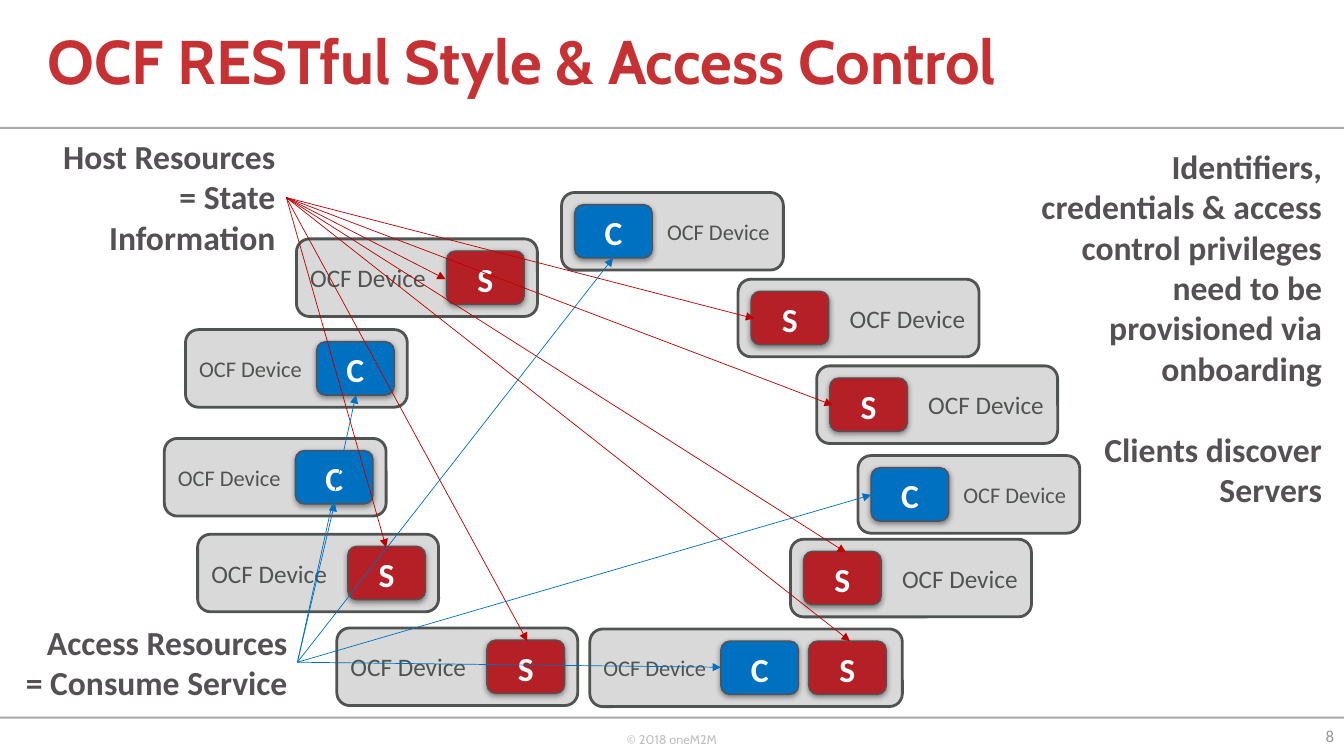
from lxml.etree import SubElement
from pptx import Presentation
from pptx.dml.color import RGBColor
from pptx.enum.shapes import MSO_CONNECTOR, MSO_SHAPE
from pptx.enum.text import MSO_ANCHOR, PP_ALIGN
from pptx.oxml import parse_xml
from pptx.oxml.ns import nsdecls, qn
from pptx.util import Inches, Pt

GREY, SLATE = "545054", "505450"
RED, BLUE = "B42025", "0070C0"
SHADOW = (
    f'<a:effectLst {nsdecls("a")}>'
    '<a:outerShdw blurRad="50800" dist="20320" dir="5400000" rotWithShape="0">'
    '<a:srgbClr val="000000"><a:alpha val="42000"/></a:srgbClr>'
    '</a:outerShdw></a:effectLst>'
)

prs = Presentation()
prs.slide_width, prs.slide_height = Inches(13.33), Inches(7.5)
s = prs.slides.add_slide(prs.slide_layouts[6])


def write(sp, text, size, color, bold=False, font="Calibri", align=PP_ALIGN.LEFT,
          anchor=MSO_ANCHOR.TOP, wrap=True, spacing=None):
    tf = sp.text_frame
    tf.word_wrap = wrap
    tf.vertical_anchor = anchor
    for i, line in enumerate(text.split("\n")):
        p = tf.add_paragraph() if i else tf.paragraphs[0]
        p.alignment = align
        p.line_spacing = spacing
        r = p.add_run()
        r.text = line
        r.font.name = font
        r.font.size = Pt(size)
        r.font.bold = bold
        r.font.color.rgb = RGBColor.from_string(color)
    return tf


def add_box(shape, x, y, w, h, fill, line=None, weight=1):
    sp = s.shapes.add_shape(shape, Inches(x), Inches(y), Inches(w), Inches(h))
    sp.shadow.inherit = False
    sp.fill.solid()
    sp.fill.fore_color.rgb = RGBColor.from_string(fill)
    if line:
        sp.line.color.rgb = RGBColor.from_string(line)
        sp.line.width = Pt(weight)
    else:
        sp.line.fill.background()
    return sp


for y in (1.26, 7.11):
    add_box(MSO_SHAPE.RECTANGLE, 0, y, 13.33, 0.02, "A7A9AC")

footer = s.shapes.add_textbox(Inches(6.12), Inches(7.21), Inches(1.12), Inches(0.4))
write(footer, "© 2018 oneM2M", 9, "BFBFBF", font="Cabin", wrap=False)
title = s.shapes.add_textbox(Inches(0.37), Inches(0), Inches(11.47), Inches(1.28))
write(title, "OCF RESTful Style & Access Control", 44, "C63133", bold=True,
      font="Cabin", anchor=MSO_ANCHOR.MIDDLE, spacing=0.9)
number = s.shapes.add_textbox(Inches(12.79), Inches(7.1), Inches(0.54), Inches(0.4))
write(number, "8", 12, "999899", align=PP_ALIGN.RIGHT, anchor=MSO_ANCHOR.MIDDLE)

device_styles = {"S": (2.39, 18, 1.49), "C": (2.2, 16, 1.3), "CS": (3.1, 16, 1.3)}
devices = [
    (2.94, 2.37, "S", PP_ALIGN.LEFT),
    (3.34, 6.23, "S", PP_ALIGN.LEFT),
    (1.96, 5.3, "S", PP_ALIGN.LEFT),
    (7.32, 2.77, "S", PP_ALIGN.RIGHT),
    (8.1, 3.63, "S", PP_ALIGN.RIGHT),
    (7.84, 5.35, "S", PP_ALIGN.RIGHT),
    (5.57, 1.91, "C", PP_ALIGN.RIGHT),
    (8.51, 4.52, "C", PP_ALIGN.RIGHT),
    (1.84, 3.27, "C", PP_ALIGN.LEFT),
    (5.85, 6.24, "CS", PP_ALIGN.LEFT),
    (1.63, 4.35, "C", PP_ALIGN.LEFT),
]
for x, y, roles, align in devices:
    width, size, offset = device_styles[roles]
    device = add_box(MSO_SHAPE.ROUNDED_RECTANGLE, x, y, width, 0.77, "D9D9D9", SLATE, 2)
    write(device, "OCF Device", size, SLATE, align=align, anchor=MSO_ANCHOR.MIDDLE)
    if align == PP_ALIGN.RIGHT:
        offset = 0.13
    for i, role in enumerate(roles):
        badge = add_box(MSO_SHAPE.ROUNDED_RECTANGLE, x + offset + 0.87 * i, y + 0.12,
                        0.77, 0.53, RED if role == "S" else BLUE, GREY)
        spPr = badge._element.spPr
        spPr.replace(spPr.find(qn("a:effectLst")), parse_xml(SHADOW))
        tf = write(badge, role, 24, "FFFFFF", bold=True, align=PP_ALIGN.CENTER)
        tf.margin_left = tf.margin_right = 0

notes = [
    (10.01, 1.4, 3.2, 3.74, "Identifiers, credentials & access control privileges "
     "need to be provisioned via onboarding\nClients discover Servers", 29),
    (0.42, 1.3, 2.41, 1.31, "Host Resources\n= State\nInformation", 0),
    (0.13, 6.12, 2.82, 0.91, "Access Resources\n= Consume Service", 0),
]
for x, y, w, h, text, gap in notes:
    note = s.shapes.add_textbox(Inches(x), Inches(y), Inches(w), Inches(h))
    tf = write(note, text, 24, GREY, bold=True, align=PP_ALIGN.RIGHT)
    if gap:
        tf.paragraphs[1].space_before = Pt(gap)

arrows = [
    ("C00000", (2.84, 1.96), [(4.42, 2.77), (5.23, 6.36), (3.83, 5.43), (8.43, 6.36),
                              (8.39, 5.48), (8.26, 4.02), (7.48, 3.16)]),
    (BLUE, (2.95, 6.57), [(3.32, 4.99), (3.53, 3.92), (6.08, 2.56), (8.64, 4.91),
                          (7.15, 6.62)]),
]
for color, (x1, y1), targets in arrows:
    for x2, y2 in targets:
        arrow = s.shapes.add_connector(MSO_CONNECTOR.STRAIGHT, Inches(x1), Inches(y1),
                                       Inches(x2), Inches(y2))
        arrow.line.color.rgb = RGBColor.from_string(color)
        arrow.line.width = Pt(0.5)
        SubElement(arrow.line._get_or_add_ln(), qn("a:tailEnd"), type="triangle")
        SubElement(arrow._element.spPr, qn("a:effectLst"))

prs.save("out.pptx")
